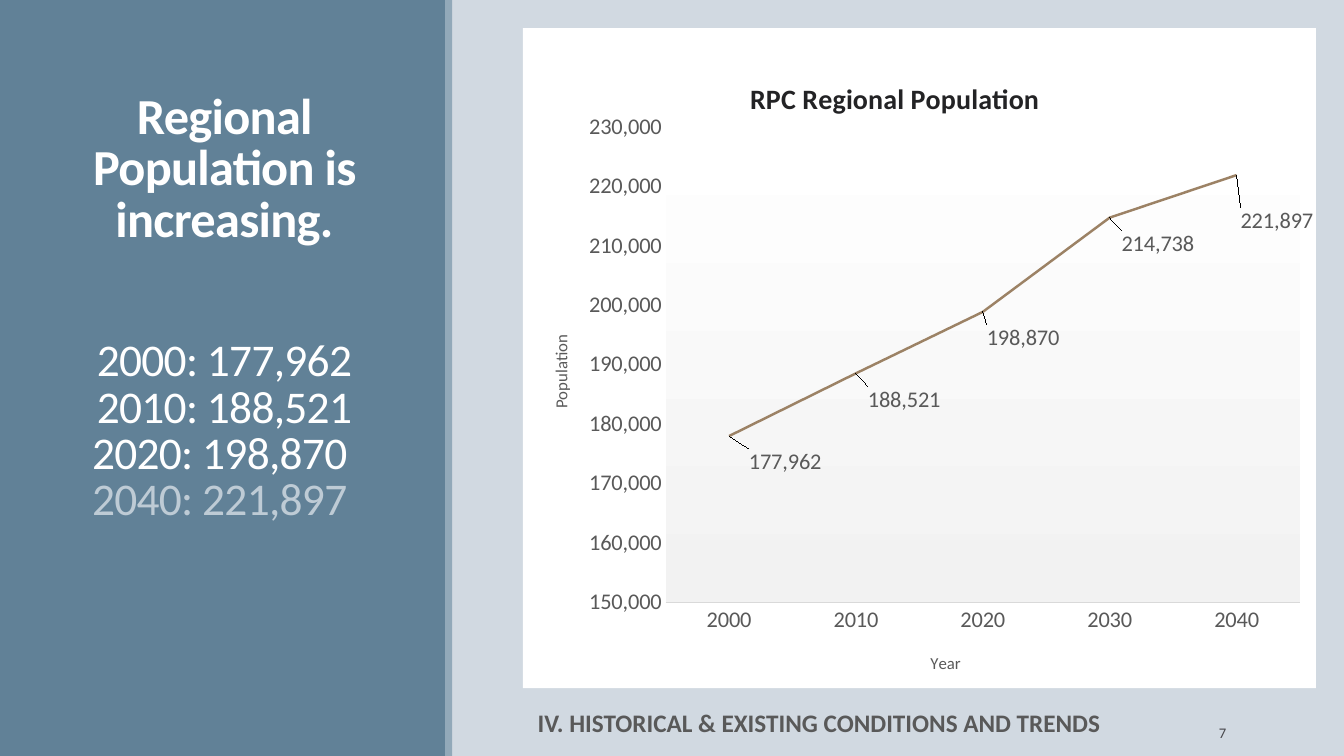
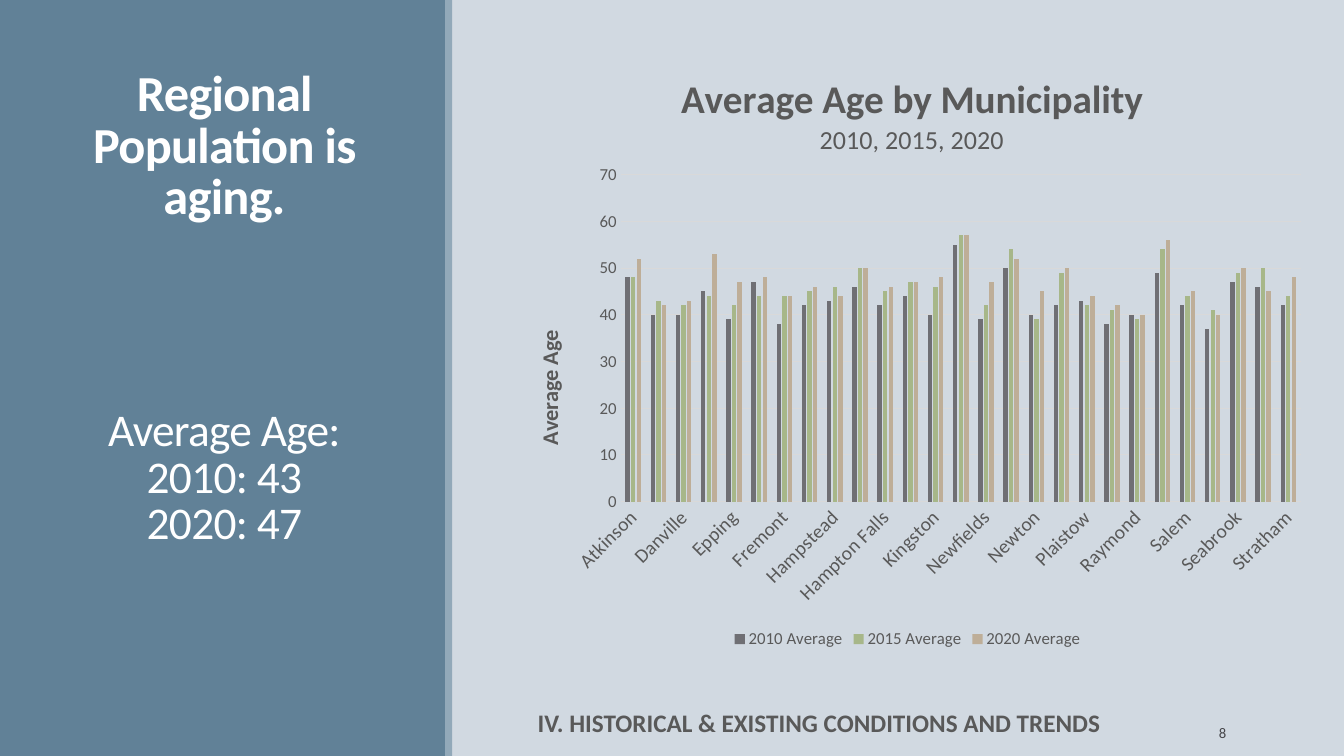
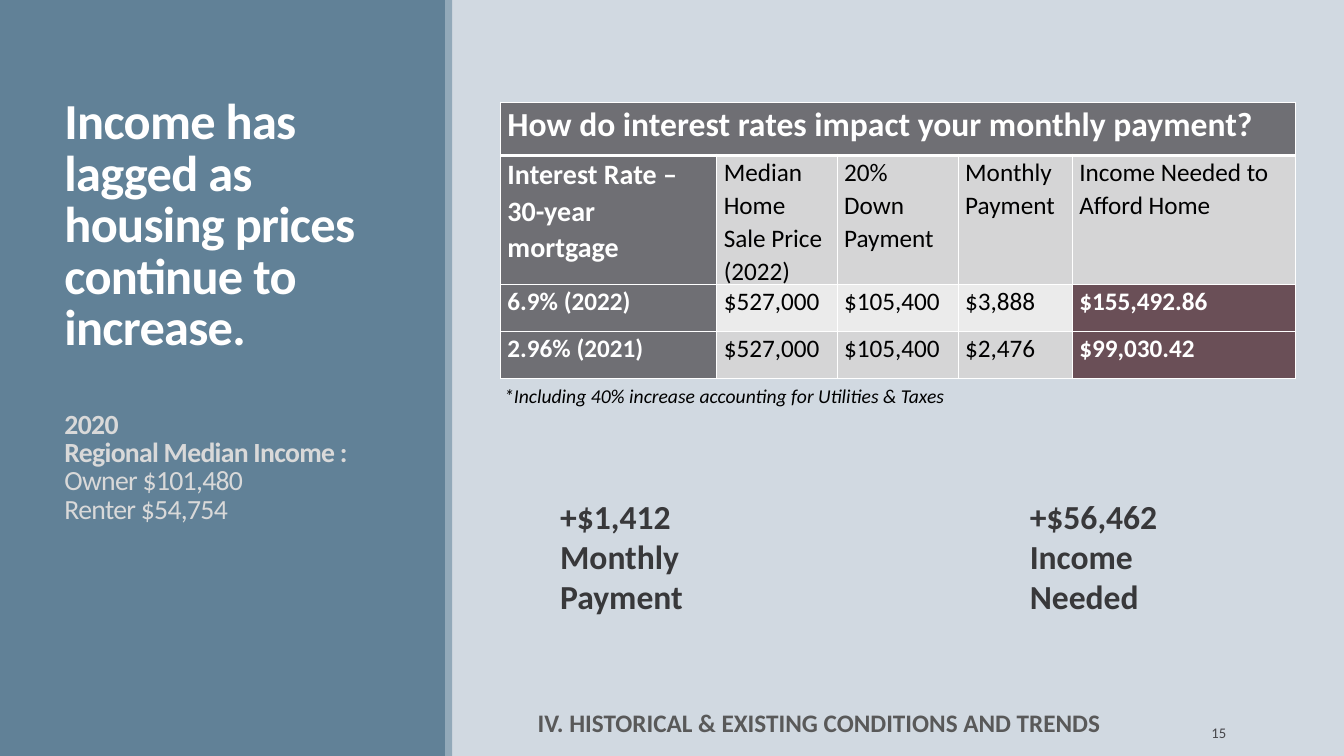
import dataclasses

import pptx
import pptx.chart.data
import pptx.dml.color
import pptx.enum.chart
import pptx.enum.shapes
import pptx.enum.text
import pptx.oxml
import pptx.oxml.ns
import pptx.util

Pt = pptx.util.Pt
Color = pptx.dml.color.RGBColor.from_string
Align = pptx.enum.text.PP_ALIGN
ChartType = pptx.enum.chart.XL_CHART_TYPE
qn = pptx.oxml.ns.qn


@dataclasses.dataclass(frozen=True)
class Theme:
    font: str = "Calibri"
    background: Color = Color("D1D9E1")
    sidebar: Color = Color("618197")
    stripe: Color = Color("92A9B9")
    white: Color = Color("FFFFFF")
    black: Color = Color("000000")
    forecast: Color = Color("BECBD5")
    sidebar_note: Color = Color("D9D9D9")
    gray_text: Color = Color("595959")
    page_number: Color = Color("46464A")
    chart_title: Color = Color("232325")
    callout: Color = Color("38383A")
    axis_line: Color = Color("D9D9D9")
    dark_gray: Color = Color("6F6F74")
    green: Color = Color("A7B789")
    sand: Color = Color("BEAE98")
    brown: Color = Color("9C8265")
    light_cell: Color = Color("EBEBEB")
    mid_cell: Color = Color("D5D5D6")
    plum_cell: Color = Color("6A4F57")
    title_size: float = 36
    figure_size: float = 32.4
    sidebar_note_size: float = 19.8
    callout_size: float = 24
    footer_size: float = 18
    note_size: float = 14
    page_number_size: float = 10.5


theme = Theme()


def add_text(slide, box, lines, alignment=Align.LEFT, line_spacing=1.0, letter_spacing=0):
    frame = slide.shapes.add_textbox(*map(Pt, box)).text_frame
    frame.word_wrap = True
    for index, (text, size, color, bold) in enumerate(lines):
        paragraph = frame.add_paragraph() if index else frame.paragraphs[0]
        paragraph.alignment = alignment
        paragraph.line_spacing = line_spacing
        paragraph.font.name = theme.font
        paragraph.font.size = Pt(size)
        paragraph.font.bold = bold
        paragraph.font.color.rgb = color
        run = paragraph.add_run()
        run.text = text
        if letter_spacing:
            run._r.get_or_add_rPr().set("spc", str(letter_spacing))
    return frame


def place(parent, index, left, top, size=None):
    for layout in parent.findall(qn("c:layout")):
        parent.remove(layout)
    values = [("x", left), ("y", top)]
    modes = ""
    if size:
        modes = '<c:layoutTarget val="inner"/>'
        values += zip("wh", size)
    if parent.tag != qn("c:dLbl"):
        modes += '<c:xMode val="edge"/><c:yMode val="edge"/>'
    numbers = "".join(f'<c:{name} val="{value}"/>' for name, value in values)
    parent.insert(index, pptx.oxml.parse_xml(
        f'<c:layout {pptx.oxml.ns.nsdecls("c")}><c:manualLayout>{modes}{numbers}'
        "</c:manualLayout></c:layout>"))


presentation = pptx.Presentation()
presentation.slide_width = Pt(960)
presentation.slide_height = Pt(540)
master_fill = presentation.slide_master.background.fill
master_fill.solid()
master_fill.fore_color.rgb = theme.background

figure = (theme.figure_size, theme.white, False)
note = (theme.sidebar_note_size, theme.sidebar_note)
sidebars = [
    ("7", "Regional Population is increasing.", 63, 66, Align.CENTER, [
        ("2000: 177,962", *figure),
        ("2010: 188,521", *figure),
        ("2020: 198,870 ", *figure),
        ("2040: 221,897 ", theme.figure_size, theme.forecast, False),
    ]),
    ("8", "Regional Population is aging.", 47, 132, Align.CENTER, [
        ("Average Age:", *figure),
        ("2010: 43", *figure),
        ("2020: 47", *figure),
    ]),
    ("15", "Income has lagged as housing prices continue to increase.", 67, 40, Align.LEFT, [
        ("2020", *note, True),
        ("Regional Median Income :", *note, True),
        ("Owner $101,480", *note, False),
        ("Renter $54,754", *note, False),
    ]),
]
slides = []
for number, title, top, gap, alignment, details in sidebars:
    slide = presentation.slides.add_slide(presentation.slide_layouts[6])
    slides.append(slide)
    for left, width, color in [(0, 319, theme.sidebar), (318, 5, theme.stripe)]:
        shape = slide.shapes.add_shape(
            pptx.enum.shapes.MSO_SHAPE.RECTANGLE, Pt(left), 0, Pt(width), Pt(540))
        shape.shadow.inherit = False
        shape.fill.solid()
        shape.fill.fore_color.rgb = color
        shape.line.fill.background()
    heading = (title, theme.title_size, theme.white, True)
    frame = add_text(slide, (39, top, 242.6, 400), [heading, *details], alignment, 0.85, -50)
    frame.paragraphs[1].space_before = Pt(gap)
    add_text(slide, (377, 502, 480, 29), [
        ("IV. HISTORICAL & EXISTING CONDITIONS AND TRENDS",
         theme.footer_size, theme.gray_text, True)])
    frame = add_text(slide, (797, 508.5, 86, 29), [
        (number, theme.page_number_size, theme.page_number, False)], Align.RIGHT)
    frame.vertical_anchor = pptx.enum.text.MSO_ANCHOR.MIDDLE
population_slide, age_slide, income_slide = slides

population_data = pptx.chart.data.CategoryChartData(number_format="#,##0")
population_data.categories = ["2000", "2010", "2020", "2030", "2040"]
population_data.add_series("Series 1", [177962, 188521, 198870, 214738, 221897])
population_chart = population_slide.shapes.add_chart(
    ChartType.LINE, Pt(373.5), Pt(20), Pt(566.5), Pt(471.5), population_data).chart

age_data = pptx.chart.data.CategoryChartData()
age_data.categories = [
    "Atkinson", "Brentwood", "Danville", "East Kingston", "Epping", "Exeter", "Fremont",
    "Greenland", "Hampstead", "Hampton", "Hampton Falls", "Kensington", "Kingston",
    "New Castle", "Newfields", "Newington", "Newton", "North Hampton", "Plaistow",
    "Portsmouth", "Raymond", "Rye", "Salem", "Sandown", "Seabrook", "South Hampton",
    "Stratham"]
age_data.add_series("2010 Average", [
    48, 40, 40, 45, 39, 47, 38, 42, 43, 46, 42, 44, 40, 55,
    39, 50, 40, 42, 43, 38, 40, 49, 42, 37, 47, 46, 42])
age_data.add_series("2015 Average", [
    48, 43, 42, 44, 42, 44, 44, 45, 46, 50, 45, 47, 46, 57,
    42, 54, 39, 49, 42, 41, 39, 54, 44, 41, 49, 50, 44])
age_data.add_series("2020 Average", [
    52, 42, 43, 53, 47, 48, 44, 46, 44, 50, 46, 47, 48, 57,
    47, 52, 45, 50, 44, 42, 40, 56, 45, 40, 50, 45, 48])
age_chart = age_slide.shapes.add_chart(
    ChartType.COLUMN_CLUSTERED, Pt(355.5), Pt(34), Pt(585.5), Pt(432.5), age_data).chart

chart_styles = [
    (population_chart, (0.18, 0.15, (0.8, 0.72)), (0.28, 0.07),
     [("RPC Regional Population", 20, theme.chart_title, True)],
     (16, 16), (150000, 230000, 10000), "#,##0",
     [("Year", 12, False, 0, (0.51, 0.94)),
      ("Population", 12, False, -5400000, (0.03, 0.46))]),
    (age_chart, (0.15, 0.21, (0.83, 0.54)), (0.22, 0.04),
     [("Average Age by Municipality", 28, theme.gray_text, True),
      ("2010, 2015, 2020", 18.6, theme.gray_text, False)],
     (14, 12), (0, 70, 10), "0",
     [None, ("Average Age", 16, True, -5400000, (0.04, 0.46))]),
]
for chart, plot_box, title_place, title_lines, tick_sizes, scale, number_format, titles in chart_styles:
    chart.font.name = theme.font
    chart.font.size = Pt(10)
    chart.font.color.rgb = theme.gray_text
    chart.has_legend = False
    chart.has_title = True
    frame = chart.chart_title.text_frame
    for index, (text, size, color, bold) in enumerate(title_lines):
        paragraph = frame.add_paragraph() if index else frame.paragraphs[0]
        paragraph.text = text
        paragraph.font.name = theme.font
        paragraph.font.size = Pt(size)
        paragraph.font.bold = bold
        paragraph.font.color.rgb = color
    place(chart.chart_title._element, 1, *title_place)
    place(chart._chartSpace.find(".//" + qn("c:plotArea")), 0, *plot_box)
    chart.plots[0].vary_by_categories = False
    chart.value_axis.minimum_scale, chart.value_axis.maximum_scale, chart.value_axis.major_unit = scale
    chart.value_axis.tick_labels.number_format = number_format
    chart.value_axis.tick_labels.number_format_is_linked = False
    chart.value_axis.has_major_gridlines = False
    chart.value_axis.format.line.fill.background()
    chart.category_axis.format.line.color.rgb = theme.axis_line
    chart.category_axis.format.line.width = Pt(0.75)
    for axis, tick_size, title in zip((chart.category_axis, chart.value_axis), tick_sizes, titles):
        axis.major_tick_mark = pptx.enum.chart.XL_TICK_MARK.NONE
        axis.tick_labels.font.name = theme.font
        axis.tick_labels.font.size = Pt(tick_size)
        axis.tick_labels.font.color.rgb = theme.gray_text
        axis.has_title = title is not None
        if title:
            text, size, bold, rotation, position = title
            frame = axis.axis_title.text_frame
            frame.text = text
            font = frame.paragraphs[0].font
            font.name = theme.font
            font.size = Pt(size)
            font.bold = bold
            font.color.rgb = theme.gray_text
            element = axis.axis_title._element
            element.find(".//" + qn("a:bodyPr")).set("rot", str(rotation))
            place(element, 1, *position)

population_space = population_chart._chartSpace
namespaces = pptx.oxml.ns.nsdecls("c", "a")
population_space.find(qn("c:chart")).addnext(pptx.oxml.parse_xml(
    f'<c:spPr {namespaces}><a:solidFill><a:srgbClr val="{theme.white}"/></a:solidFill>'
    "<a:ln><a:noFill/></a:ln></c:spPr>"))
population_space.find(".//" + qn("c:plotArea")).append(pptx.oxml.parse_xml(
    f'<c:spPr {namespaces}><a:gradFill><a:gsLst>'
    f'<a:gs pos="0"><a:srgbClr val="{theme.white}"/></a:gs>'
    '<a:gs pos="100000"><a:srgbClr val="F2F2F2"/></a:gs>'
    '</a:gsLst><a:lin ang="5400000" scaled="0"/></a:gradFill></c:spPr>'))
population_series = population_chart.plots[0].series[0]
population_series.smooth = False
population_series.format.line.color.rgb = theme.brown
population_series.format.line.width = Pt(1.75)
population_series.marker.style = pptx.enum.chart.XL_MARKER_STYLE.NONE
label_offsets = [(0.02, 0.04), (0.01, 0.04), (0, 0.04), (0.01, 0.04), (0, 0.07)]
for index in range(len(label_offsets)):
    label = population_series.points[index].data_label
    label.position = pptx.enum.chart.XL_LABEL_POSITION.RIGHT
    label.font.name = theme.font
    label.font.size = Pt(16)
    label.font.color.rgb = theme.gray_text
for element, offset in zip(population_series._element.iter(qn("c:dLbl")), label_offsets):
    place(element, 1, *offset)

age_chart.plots[0].gap_width = 219
age_chart.plots[0].overlap = -27
for series, color in zip(age_chart.plots[0].series, (theme.dark_gray, theme.green, theme.sand)):
    series.format.fill.solid()
    series.format.fill.fore_color.rgb = color
age_chart.value_axis.has_major_gridlines = True
gridline = age_chart.value_axis.major_gridlines.format.line
gridline.color.rgb = theme.axis_line
gridline.width = Pt(0.75)
age_chart.category_axis._element.find(".//" + qn("a:bodyPr")).set("rot", "-2700000")
age_chart.has_legend = True
age_chart.legend.position = pptx.enum.chart.XL_LEGEND_POSITION.BOTTOM
age_chart.legend.include_in_layout = False
age_chart.legend.font.name = theme.font
age_chart.legend.font.size = Pt(12)
age_chart.legend.font.color.rgb = theme.gray_text

rate_rows = [
    ["How do interest rates impact your monthly payment?", "", "", "", ""],
    ["Interest Rate –\n30-year mortgage", "Median Home Sale Price (2022)",
     "20% Down Payment", "Monthly Payment", "Income Needed to Afford Home"],
    ["6.9% (2022)", "$527,000", "$105,400", "$3,888", "$155,492.86"],
    ["2.96% (2021)", "$527,000", "$105,400", "$2,476", "$99,030.42"],
]
row_fills = [theme.dark_gray, theme.mid_cell, theme.light_cell, theme.mid_cell]
first_column_sizes = [24, 20, 18, 18]
table = income_slide.shapes.add_table(4, 5, Pt(357.5), Pt(73), Pt(568), Pt(186.5)).table
table.horz_banding = False
for column, width in zip(table.columns, (154.5, 86, 86.5, 81.5, 159.5)):
    column.width = Pt(width)
for row, height in zip(table.rows, (38, 81, 33.5, 33.5)):
    row.height = Pt(height)
table.cell(0, 0).merge(table.cell(0, 4))
for row_index, texts in enumerate(rate_rows):
    for column_index, text in enumerate(texts):
        cell = table.cell(row_index, column_index)
        income_cell = row_index > 1 and column_index == 4
        dark = row_index == 0 or column_index == 0 or income_cell
        cell.margin_left = cell.margin_right = Pt(5)
        cell.margin_top = cell.margin_bottom = 0
        cell.fill.solid()
        cell.fill.fore_color.rgb = (
            theme.plum_cell if income_cell else theme.dark_gray if dark else row_fills[row_index])
        cell.text = text
        for paragraph in cell.text_frame.paragraphs:
            paragraph.line_spacing = 1.07
            paragraph.font.name = theme.font
            paragraph.font.size = Pt(18 if column_index else first_column_sizes[row_index])
            paragraph.font.bold = dark
            paragraph.font.color.rgb = theme.white if dark else theme.black
        properties = cell._tc.get_or_add_tcPr()
        for index, side in enumerate("LRTB"):
            thick = (row_index, side) in ((0, "B"), (1, "T"))
            properties.insert(index, pptx.oxml.parse_xml(
                f'<a:ln{side} {pptx.oxml.ns.nsdecls("a")} w="{Pt(3 if thick else 1)}">'
                f'<a:solidFill><a:srgbClr val="{theme.white}"/></a:solidFill></a:ln{side}>'))

frame = add_text(income_slide, (353, 269.5, 343, 24.5), [
    ("*Including 40% increase accounting for Utilities & Taxes",
     theme.note_size, theme.black, False)], line_spacing=1.07)
frame.paragraphs[0].font.italic = True
callout = (theme.callout_size, theme.callout, True)
add_text(income_slide, (393, 350.5, 111.5, 94.5), [("+$1,412 Monthly Payment", *callout)])
add_text(income_slide, (728.5, 350.5, 136, 94.5), [
    ("+$56,462", *callout), ("Income Needed", *callout)])

presentation.save("out.pptx")
